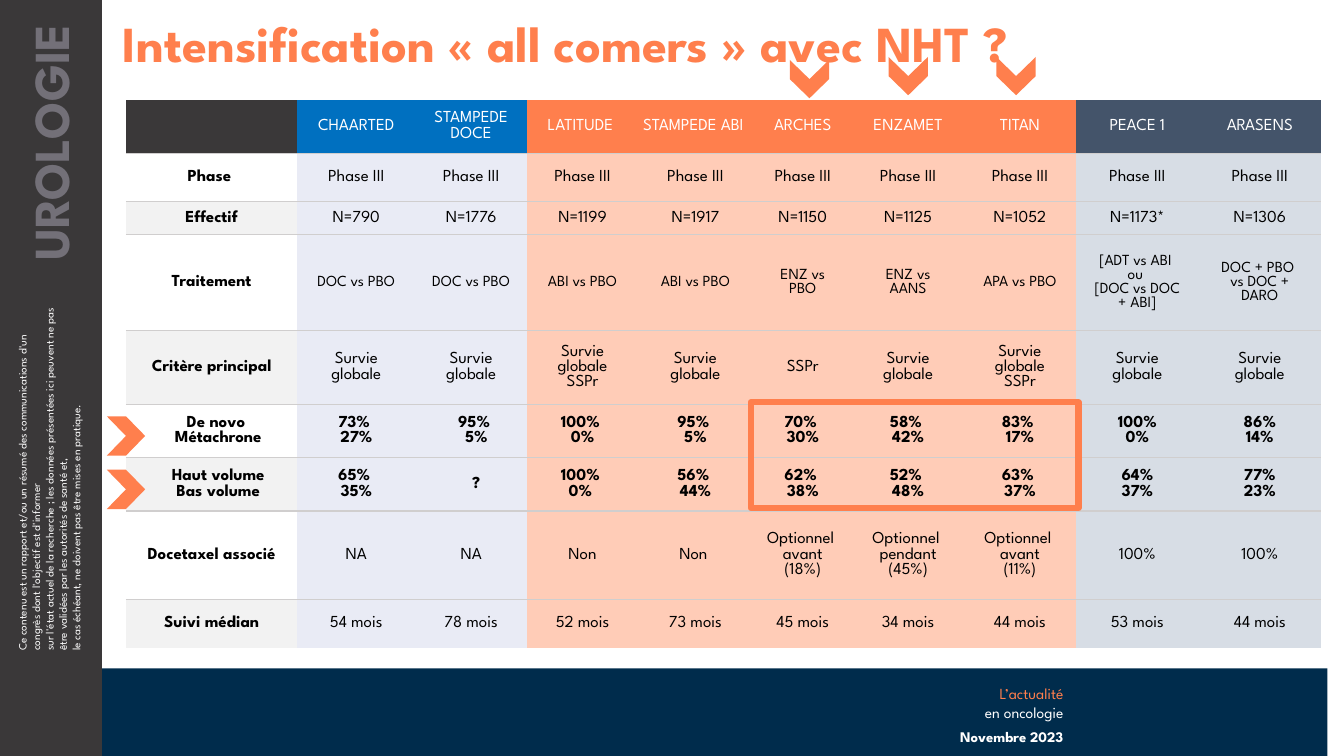
from dataclasses import dataclass
from itertools import cycle
from lxml.etree import SubElement
from pptx import Presentation
from pptx.dml.color import RGBColor
from pptx.enum.shapes import MSO_SHAPE
from pptx.enum.text import MSO_ANCHOR, MSO_AUTO_SIZE, PP_ALIGN
from pptx.oxml.ns import qn
from pptx.slide import Slide
from pptx.table import _Cell
from pptx.text.text import TextFrame
from pptx.util import Pt

FONT = "League Spartan"
PLAIN = "{2D5ABB26-0587-4C30-8999-92F81FD0307C}"
HUES = {
    "navy": "002C4C", "coal": "3A3839", "white": "FFFFFF", "black": "000000",
    "grey": "737078", "coral": "FF7F4D", "peach": "FFCCB7", "blue": "0070C0",
    "lilac": "E9EBF5", "slate": "44546A", "mist": "D7DDE5", "pale": "F2F2F2",
    "rule": "D0CECE",
}
HEADS = ["coal"] + ["blue"] * 2 + ["coral"] * 5 + ["slate"] * 2
BODIES = [""] + ["lilac"] * 2 + ["peach"] * 5 + ["mist"] * 2
WIDTHS = [122.4, 84.24, 79.92, 79.2, 82.08, 71.28, 79.2, 80.64, 87.12, 87.84]
HEIGHTS = [38.16, 34.56, 23.76, 68.4, 52.56, 38.16, 38.16, 63.36, 34.56]
GOAL = "Survie globale"
ROWS = [
    ["", "CHAARTED", "STAMPEDE DOCE", "LATITUDE ", "STAMPEDE ABI ", "ARCHES",
     "ENZAMET", "TITAN", "PEACE 1", "ARASENS"],
    ["Phase "] + ["Phase III"] * 9,
    ["Effectif", "N=790", "N=1776", "N=1199", "N=1917", "N=1150", "N=1125",
     "N=1052", "N=1173*", "N=1306"],
    ["Traitement", "DOC vs PBO", "DOC vs PBO", "ABI vs PBO", "ABI vs PBO",
     "ENZ vs PBO", "ENZ vs AANS", "APA vs PBO",
     "[ADT vs ABI \nou \n[DOC vs DOC + ABI]", "DOC + PBO \nvs DOC + DARO"],
    ["Critère principal", GOAL, GOAL, GOAL + "\nSSPr", GOAL, "SSPr", GOAL,
     GOAL + "\nSSPr", GOAL, GOAL],
    ["De novo \nMétachrone", "73% \n27%", "95% \n5%", "100% \n0%", "95% \n5%",
     "70% \n30%", "58% \n42%", "83% \n17%", "100%\n0%", "86%\n14%"],
    ["Haut volume\nBas volume", "65% \n35%", "?", "100% \n0% ", "56% \n44%",
     "62% \n38%", "52% \n48%", "63% \n37%", "64%\n37%", "77%\n23%"],
    ["Docetaxel associé", "NA", "NA", "Non", "Non ",
     "Optionnel \navant\n(18%)", "Optionnel \npendant\n(45%)",
     "Optionnel \navant\n(11%)", "100%", "100%"],
    ["Suivi médian", "54 mois", "78 mois", "52 mois", "73 mois", "45 mois",
     "34 mois", "44 mois", "53 mois", "44 mois"],
]
HEAD, DOSE, SPLIT, LAST = 0, 3, (5, 6), len(ROWS) - 1


@dataclass
class Mark:
    """A preset shape, filled or outlined."""
    kind: MSO_SHAPE
    left: float
    top: float
    wide: float
    high: float
    fill: str = ""
    line: str = ""
    turn: float = 0


@dataclass
class Note:
    """A block of text."""
    words: str
    left: float
    top: float
    wide: float
    high: float
    size: float
    hues: tuple[str, ...] = ("white",)
    bold: bool = False
    align: PP_ALIGN = PP_ALIGN.RIGHT
    turn: float = 0
    pads: tuple[float, ...] = (7.2, 3.6, 7.2, 3.6)
    hold: MSO_ANCHOR = MSO_ANCHOR.TOP


BANDS = [
    Mark(MSO_SHAPE.RECTANGLE, 61.2, 477.36, 887.04, 62.64, "navy"),
    Mark(MSO_SHAPE.RECTANGLE, 0, 0, 72.72, 540, "coal"),
]
SIGNS = [Mark(MSO_SHAPE.ROUNDED_RECTANGLE, 536.4, 287.28, 234, 75.6, line="coral")]
SIGNS += [Mark(MSO_SHAPE.CHEVRON, x, y, 27.36, 28.08, "coral", turn=turn)
          for x, y, turn in [(712.08, 40.32, 90), (635.04, 40.32, 90), (564.48, 42.48, 90),
                             (76.32, 297.36, 0), (76.32, 335.52, 0)]]
TITLE = Note("Intensification « all comers » avec NHT ?", 73.44, 0, 886.32, 41.04, 36,
             ("coral",), True, PP_ALIGN.LEFT, pads=(14.4, 13.6, 7.2, 0))
NOTES = [
    Note("Ce contenu est un rapport et/ou un résumé des communications d'un congrès "
         "dont l'objectif est d'informer\n"
         "sur l'état actuel de la recherche ; les données présentées ici peuvent ne pas "
         "être validées par les autorités de santé et,\n"
         "le cas échéant, ne doivent pas être mises en pratique.",
         -94.32, 314.64, 259.2, 55.44, 8, align=PP_ALIGN.LEFT, turn=270),
    Note("UROLOGIE", -74.88, 84.96, 221.04, 51.12, 36, ("grey",), True,
         turn=270, pads=(7.2, 3.6, 17.28, 3.6)),
    Note("L’actualité\nen oncologie", 648.72, 485.28, 118.08, 33.84, 11, ("coral", "white")),
    Note("Novembre 2023", 648.72, 516.24, 110.88, 19.44, 10.5, bold=True,
         pads=(7.2, 3.6, 0, 3.6), hold=MSO_ANCHOR.BOTTOM),
]


def tint(name: str) -> RGBColor:
    """Look up a colour."""
    return RGBColor.from_string(HUES[name])


def write(frame: TextFrame, words: str, size: float, hues: tuple[str, ...],
          bold: bool, align: PP_ALIGN) -> None:
    """Set the text, then format its runs."""
    frame.text = words
    for para, hue in zip(frame.paragraphs, cycle(hues)):
        para.alignment = align
        for run in para.runs:
            run.font.name, run.font.size, run.font.bold = FONT, Pt(size), bold
            run.font.color.rgb = tint(hue)


def pad(item: TextFrame | _Cell, pads: tuple[float, ...]) -> None:
    """Set the four insets."""
    sides = [Pt(side) for side in pads]
    item.margin_left, item.margin_top, item.margin_right, item.margin_bottom = sides


def draw(slide: Slide, mark: Mark) -> None:
    """Add one preset shape."""
    shape = slide.shapes.add_shape(mark.kind, Pt(mark.left), Pt(mark.top),
                                   Pt(mark.wide), Pt(mark.high))
    shape.shadow.inherit = False
    shape.rotation = mark.turn
    if mark.fill:
        shape.fill.solid()
        shape.fill.fore_color.rgb = tint(mark.fill)
        shape.line.fill.background()
    else:
        shape.fill.background()
        shape.adjustments[0] = 0
        shape.line.color.rgb = tint(mark.line)
        shape.line.width = Pt(4.5)


def place(slide: Slide, note: Note, head: bool = False) -> None:
    """Put a note in the title or in a new text box."""
    spot = [Pt(note.left), Pt(note.top), Pt(note.wide), Pt(note.high)]
    box = slide.shapes.title if head else slide.shapes.add_textbox(*spot)
    box.left, box.top, box.width, box.height = spot
    box.rotation = note.turn
    frame = box.text_frame
    frame.word_wrap, frame.auto_size = True, MSO_AUTO_SIZE.NONE
    frame.vertical_anchor = note.hold
    pad(frame, note.pads)
    write(frame, note.words, note.size, note.hues, note.bold, note.align)
    if head:
        frame.paragraphs[0].line_spacing = 0.9
        frame.paragraphs[0].space_before = Pt(0)


def edge(cell: _Cell, tag: str) -> None:
    """Rule one side of a cell."""
    line = SubElement(cell._tc.get_or_add_tcPr(), qn(tag), w=str(Pt(1)))
    SubElement(SubElement(line, qn("a:solidFill")), qn("a:srgbClr"), val=HUES["rule"])


def fill(cell: _Cell, row: int, col: int) -> None:
    """Format one cell by its row and column."""
    if row > HEAD:
        edge(cell, "a:lnT")
    if row < LAST:
        edge(cell, "a:lnB")
    hue = HEADS[col] if row == HEAD else BODIES[col]
    if col == 0 and row > HEAD and row % 2 == 0:
        hue = "pale"
    if hue:
        cell.fill.solid()
        cell.fill.fore_color.rgb = tint(hue)
    else:
        cell.fill.background()
    cell.vertical_anchor = MSO_ANCHOR.MIDDLE
    side = 0 if row == HEAD else 9.36
    left = side + 7.2 if row in SPLIT and col == 2 else side
    right = 0 if row in SPLIT and col == 0 else side
    pad(cell, (left, 5.04, right, 5.04))
    write(cell.text_frame, ROWS[row][col], 11 if row == DOSE and col else 12,
          ("white" if row == HEAD else "black",),
          row in SPLIT or (col == 0 and row > HEAD), PP_ALIGN.CENTER)


def chart(slide: Slide) -> None:
    """Add the table of trials."""
    grid = slide.shapes.add_table(len(ROWS), len(WIDTHS), Pt(90), Pt(71.28),
                                  Pt(sum(WIDTHS)), Pt(sum(HEIGHTS))).table
    grid.first_row = grid.horz_banding = False
    grid._tbl.tblPr.find(qn("a:tableStyleId")).text = PLAIN
    for col, wide in enumerate(WIDTHS):
        grid.columns[col].width = Pt(wide)
    for row, high in enumerate(HEIGHTS):
        grid.rows[row].height = Pt(high)
        for col in range(len(WIDTHS)):
            fill(grid.cell(row, col), row, col)


def main() -> None:
    """Build the slide and save it."""
    deck = Presentation()
    deck.slide_width, deck.slide_height = Pt(960), Pt(540)
    slide = deck.slides.add_slide(deck.slide_layouts[5])
    for band in BANDS:
        draw(slide, band)
    for note in NOTES:
        place(slide, note)
    place(slide, TITLE, True)
    chart(slide)
    for sign in SIGNS:
        draw(slide, sign)
    deck.save("out.pptx")


if __name__ == "__main__":
    main()
